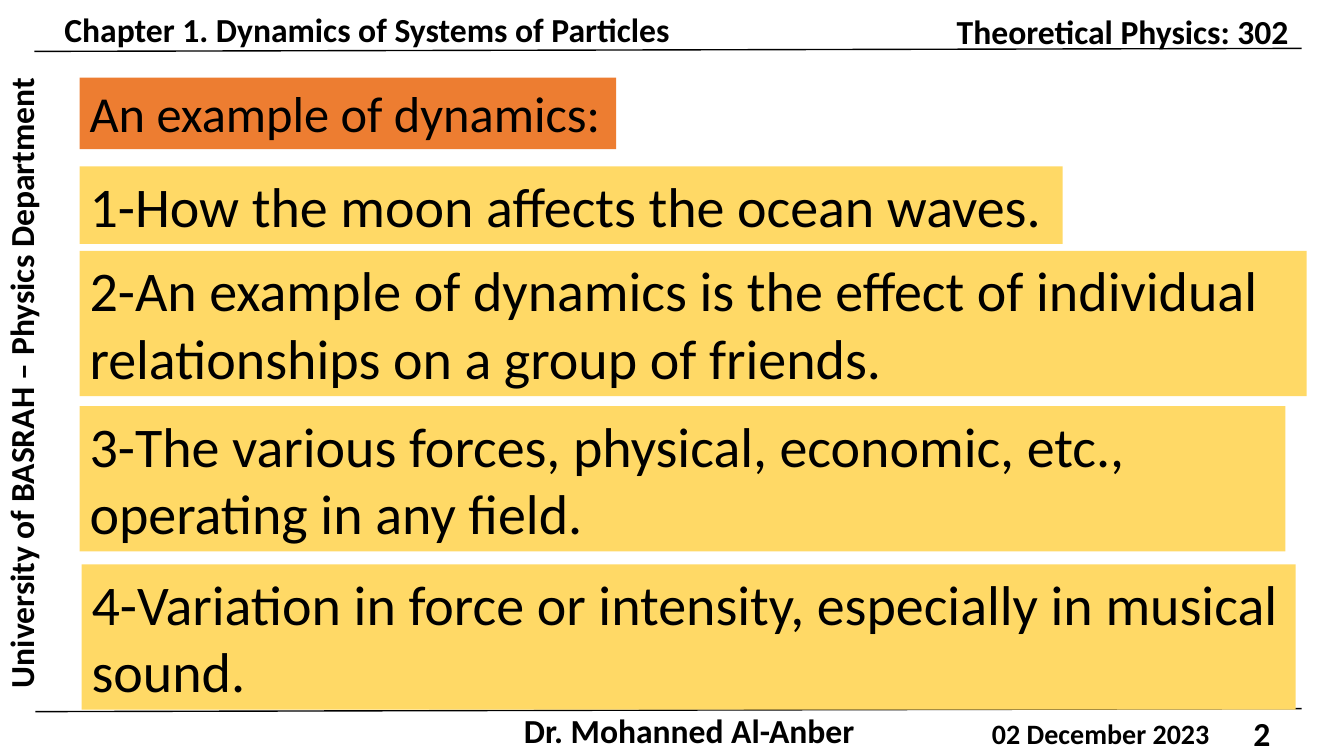
from pptx import Presentation
from pptx.dml.color import RGBColor
from pptx.enum.shapes import MSO_CONNECTOR
from pptx.enum.text import MSO_ANCHOR, MSO_AUTO_SIZE, PP_ALIGN
from pptx.oxml.ns import qn
from pptx.util import Inches, Pt
from lxml.etree import SubElement

BLACK = RGBColor(0, 0, 0)
ORANGE = RGBColor(0xED, 0x7D, 0x31)
YELLOW = RGBColor(0xFF, 0xD9, 0x66)
FONT = "Calibri"
W, H = 13.33, 7.5
LEFT = 0.79
LINE_H = 0.5
RULES = [(0.34, 0.51, 12.91, 0.48), (0.35, 7.06, 12.91, 7.03)]

FRAME = [
    ("Chapter 1. Dynamics of Systems of Particles", (0.54, 0.04, 6.41, LINE_H), {}),
    ("Theoretical Physics: 302", (9.39, 0.06, 3.61, LINE_H), {}),
    ("02 December 2023", (9.74, 7.07, 2.51, 0.4),
     dict(size=20, anchor=MSO_ANCHOR.MIDDLE, grow=False)),
    ("2", (12.04, 7.07, 0.66, 0.4),
     dict(align=PP_ALIGN.RIGHT, anchor=MSO_ANCHOR.MIDDLE, grow=False)),
    ("Dr. Mohanned Al-Anber", (4.98, 6.99, 3.71, LINE_H), dict(align=PP_ALIGN.CENTER)),
    ("University of BASRAH – Physics Department", (-2.95, 3.52, 6.31, LINE_H),
     dict(wrap=False, rotation=270)),
]

EXAMPLES = [
    ("4-Variation in force or intensity, especially in musical sound.", 0.81, 5.6, 12.04, 2),
    ("1-How the moon affects the ocean waves.", LEFT, 1.65, 9.75, 1),
    ("2-An example of dynamics is the effect of individual relationships on a group of friends.",
     LEFT, 2.49, 12.17, 2),
    ("3-The various forces, physical, economic, etc., operating in any field.",
     LEFT, 4.03, 11.96, 2),
]


def add_text(s, text, box, size=24, bold=True, fill=None, align=PP_ALIGN.LEFT,
             anchor=MSO_ANCHOR.TOP, wrap=True, grow=True, rotation=0):
    sp = s.shapes.add_textbox(*map(Inches, box))
    sp.rotation = rotation
    if fill is not None:
        sp.fill.solid()
        sp.fill.fore_color.rgb = fill
    tf = sp.text_frame
    tf.word_wrap = wrap
    tf.auto_size = MSO_AUTO_SIZE.SHAPE_TO_FIT_TEXT if grow else MSO_AUTO_SIZE.NONE
    tf.vertical_anchor = anchor
    p = tf.paragraphs[0]
    p.alignment = align
    r = p.add_run()
    r.text = text
    r.font.name = FONT
    r.font.size = Pt(size)
    r.font.bold = bold
    r.font.color.rgb = BLACK


def add_rule(s, ends):
    line = s.shapes.add_connector(MSO_CONNECTOR.STRAIGHT, *map(Inches, ends))
    line.line.color.rgb = BLACK
    line.line.width = Pt(1)
    SubElement(line._element.spPr, qn("a:effectLst"))


def main():
    prs = Presentation()
    prs.slide_width, prs.slide_height = Inches(W), Inches(H)
    s = prs.slides.add_slide(prs.slide_layouts[6])
    for ends in RULES:
        add_rule(s, ends)
    for text, box, fmt in FRAME:
        add_text(s, text, box, **fmt)
    add_text(s, "An example of dynamics:", (LEFT, 0.77, 5.32, 0.71),
             size=36, bold=False, fill=ORANGE, wrap=False)
    for text, x, y, w, rows in EXAMPLES:
        add_text(s, text, (x, y, w, 0.1 + 0.67 * rows),
                 size=40, bold=False, fill=YELLOW, wrap=rows > 1)
    prs.save("out.pptx")


if __name__ == "__main__":
    main()
